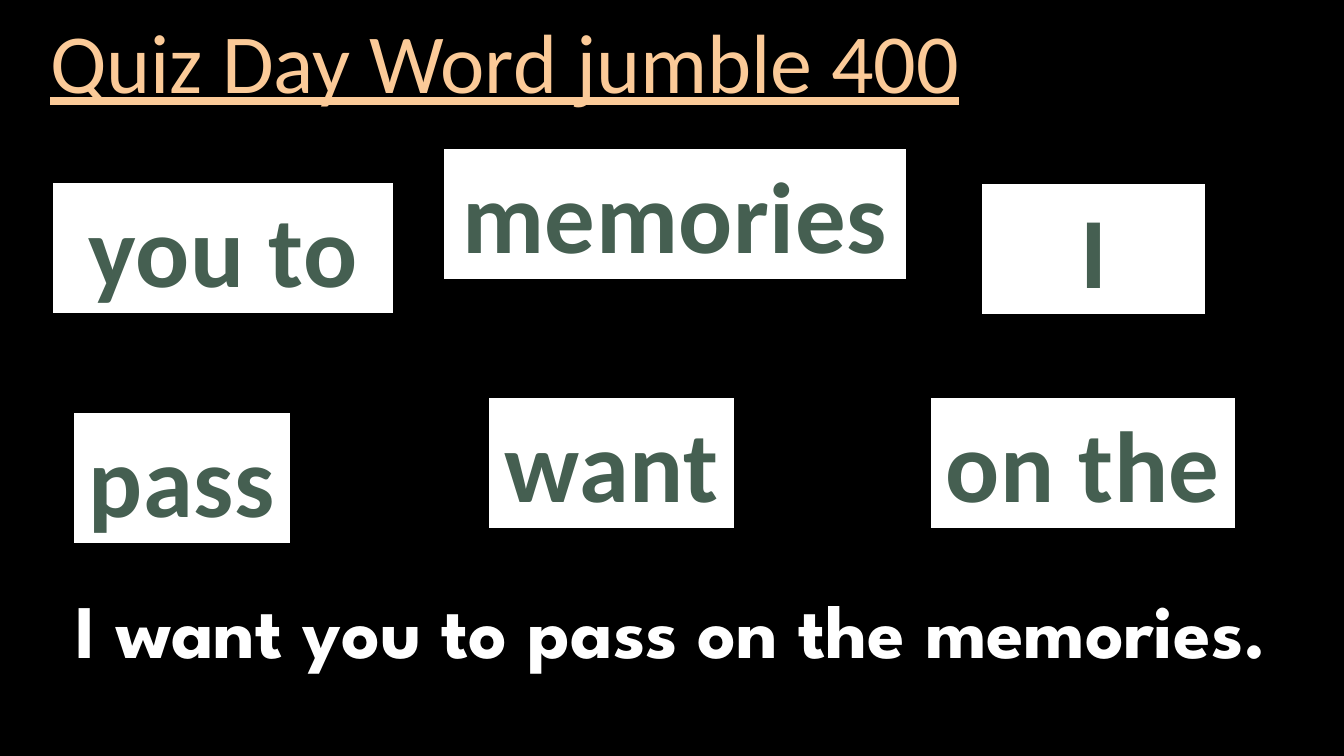
from dataclasses import dataclass

from pptx import Presentation
from pptx.dml.color import RGBColor
from pptx.enum.text import MSO_ANCHOR, MSO_AUTO_SIZE as AutoSize, PP_ALIGN
from pptx.util import Pt

TITLE = "Quiz Day Word jumble 400"
ANSWER = "I want you to pass on the memories."
# word, left, top, width (px), wraps
CARDS = [
    ("you to", 52, 182, 342, True),
    ("memories", 443, 148, 464, False),
    ("I", 981, 183, 225, True),
    ("pass", 73, 412, 218, False),
    ("want", 488, 397, 247, False),
    ("on the", 930, 397, 306, False),
]

SLIDE_WIDTH, SLIDE_HEIGHT = 1344, 756
CARD_HEIGHT = 132
TITLE_BOX = (40, 16, 1148, 100)
ANSWER_BOX = (0, 578, 1343, 102)
EMU_PER_PX = 12192000 / SLIDE_WIDTH


@dataclass(frozen=True)
class Theme:
    background: str = "000000"
    title: str = "FBCA98"
    card: str = "FFFFFF"
    word: str = "455F51"
    answer: str = "FFFFFF"
    body_font: str = "Calibri"
    answer_font: str = "League Spartan"
    title_size: int = 60
    word_size: int = 72
    answer_size: int = 54


THEME = Theme()


def px(length):
    return round(length * EMU_PER_PX)


def color(code):
    return RGBColor.from_string(code)


def write(shape, text, *, size, ink, font=THEME.body_font, bold=False, underline=False,
          align=PP_ALIGN.CENTER, anchor=MSO_ANCHOR.TOP, wrap=True,
          auto_size=AutoSize.SHAPE_TO_FIT_TEXT, line_spacing=None, tracking=0):
    """Fill a shape with one formatted line; tracking is in hundredths of a point."""
    frame = shape.text_frame
    frame.word_wrap = wrap
    frame.auto_size = auto_size
    frame.vertical_anchor = anchor
    paragraph = frame.paragraphs[0]
    paragraph.alignment = align
    paragraph.line_spacing = line_spacing
    run = paragraph.add_run()
    run.text = text
    run.font.name = font
    run.font.size = Pt(size)
    run.font.bold = bold
    run.font.underline = underline
    run.font.color.rgb = color(ink)
    if tracking:
        run._r.get_or_add_rPr().set("spc", str(tracking))


def add_title(slide):
    title = slide.shapes.title
    title.left, title.top, title.width, title.height = map(px, TITLE_BOX)
    write(title, TITLE, size=THEME.title_size, ink=THEME.title, underline=True,
          align=PP_ALIGN.LEFT, anchor=MSO_ANCHOR.MIDDLE,
          auto_size=AutoSize.NONE, line_spacing=0.9)


def add_card(slide, word, left, top, width, wrap):
    card = slide.shapes.add_textbox(*map(px, (left, top, width, CARD_HEIGHT)))
    card.fill.solid()
    card.fill.fore_color.rgb = color(THEME.card)
    card.line.color.rgb = color(THEME.background)
    card.line.width = Pt(1)
    write(card, word, size=THEME.word_size, ink=THEME.word, bold=True,
          wrap=wrap, tracking=50)


def main():
    presentation = Presentation()
    presentation.slide_width = px(SLIDE_WIDTH)
    presentation.slide_height = px(SLIDE_HEIGHT)
    slide = presentation.slides.add_slide(presentation.slide_layouts.get_by_name("Title Only"))
    slide.background.fill.solid()
    slide.background.fill.fore_color.rgb = color(THEME.background)

    add_title(slide)
    for card in CARDS:
        add_card(slide, *card)
    answer = slide.shapes.add_textbox(*map(px, ANSWER_BOX))
    write(answer, ANSWER, size=THEME.answer_size, ink=THEME.answer,
          font=THEME.answer_font, bold=True)
    presentation.save("out.pptx")


if __name__ == "__main__":
    main()
